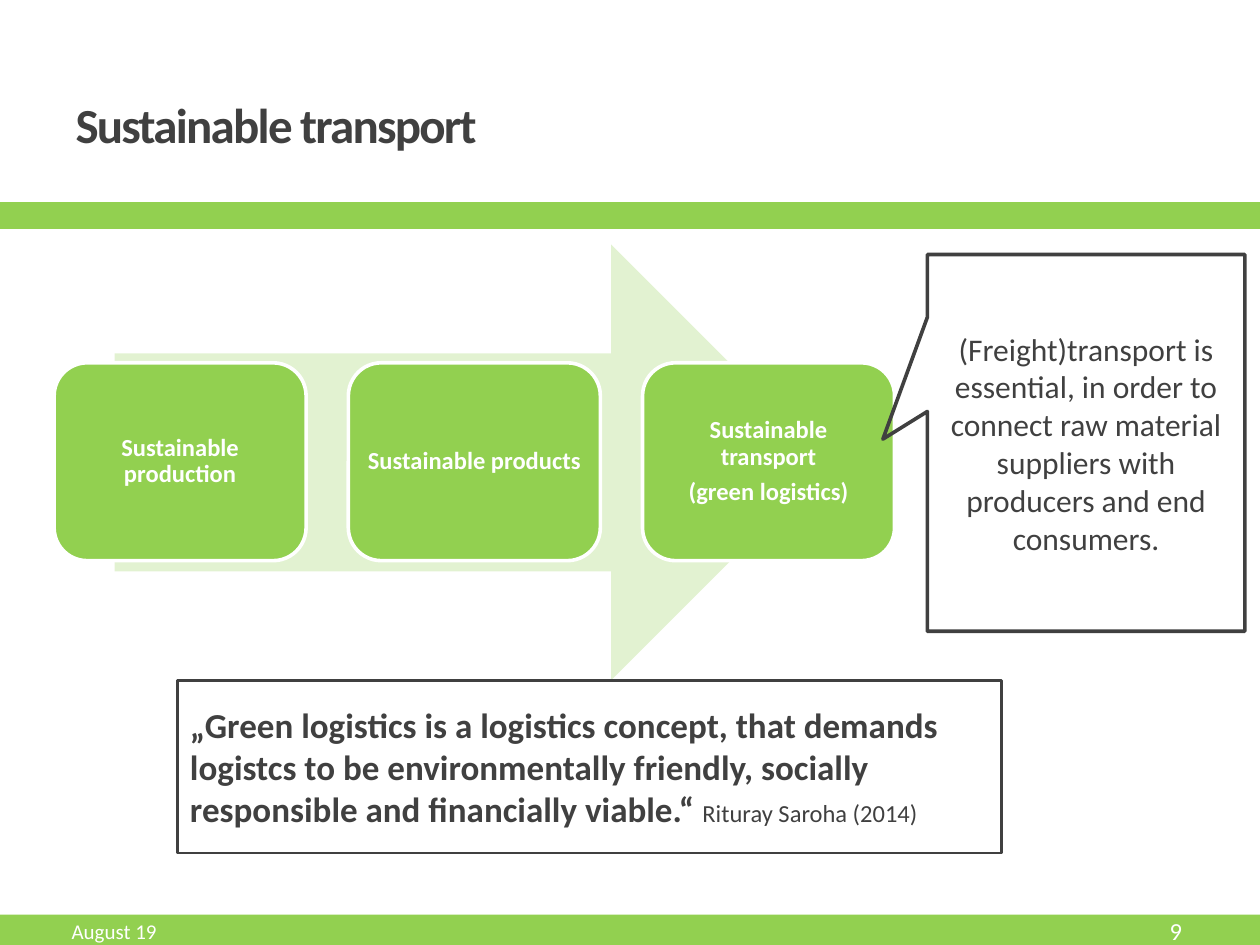
from dataclasses import dataclass

from lxml import etree
from pptx import Presentation
from pptx.dml.color import RGBColor
from pptx.enum.shapes import MSO_SHAPE
from pptx.enum.text import MSO_ANCHOR, PP_ALIGN
from pptx.oxml.ns import qn
from pptx.util import Inches, Pt

RECT = MSO_SHAPE.RECTANGLE
ROUND = MSO_SHAPE.ROUNDED_RECTANGLE
ARROW = MSO_SHAPE.RIGHT_ARROW
CALLOUT = MSO_SHAPE.RECTANGULAR_CALLOUT
MIDDLE = MSO_ANCHOR.MIDDLE
LEFT, CENTER, RIGHT = PP_ALIGN.LEFT, PP_ALIGN.CENTER, PP_ALIGN.RIGHT


@dataclass(frozen=True)
class Theme:
    font: str = "Calibri"
    green: RGBColor = RGBColor(0x92, 0xD0, 0x50)
    white: RGBColor = RGBColor(0xFF, 0xFF, 0xFF)
    dark: RGBColor = RGBColor(0x40, 0x40, 0x40)
    title: int = 28
    quote: int = 20
    body: int = 18
    small: int = 14
    date: int = 12
    edge: float = 2.08
    thin: float = 1.5


THEME = Theme()


def place(shape, box):
    shape.left, shape.top, shape.width, shape.height = map(Inches, box)


def write(shape, *paras, size, color, bold=False, align=LEFT,
          before=0, after=0, line=1.0, inset=None):
    frame = shape.text_frame
    frame.word_wrap = True
    frame.vertical_anchor = MIDDLE
    if inset is not None:
        frame.margin_left = frame.margin_right = Inches(inset)
        frame.margin_top = frame.margin_bottom = Inches(inset)
    for num, text in enumerate(paras):
        para = frame.add_paragraph() if num else frame.paragraphs[0]
        para.alignment = align
        para.space_before, para.space_after = Pt(before), Pt(after)
        para.line_spacing = line
        add_run(para, text, size, color, bold)


def add_run(para, text, size, color, bold=False):
    run = para.add_run()
    run.text = text
    font = run.font
    font.name, font.size, font.bold = THEME.font, Pt(size), bold
    font.color.rgb = color
    return run


def add_shape(slide, kind, box, fill=None, edge=None, width=THEME.edge, alpha=None):
    shape = slide.shapes.add_shape(kind, *map(Inches, box))
    shape.shadow.inherit = False
    if fill is None:
        shape.fill.background()
    else:
        shape.fill.solid()
        shape.fill.fore_color.rgb = fill
    if alpha is not None:
        tint = shape.fill._xPr.find(".//" + qn("a:srgbClr"))
        etree.SubElement(tint, qn("a:alpha")).set("val", str(alpha * 1000))
    if edge is None:
        shape.line.fill.background()
    else:
        shape.line.color.rgb = edge
        shape.line.width = Pt(width)
    return shape


def add_label(slide, box, text, **style):
    label = slide.shapes.add_textbox(*map(Inches, box))
    write(label, text, color=THEME.white, **style)


def add_title(slide, text):
    title = slide.shapes.title
    place(title, (0.5, 0.44, 5.21, 1.08))
    write(title, text, size=THEME.title, color=THEME.dark, bold=True)
    run = title.text_frame.paragraphs[0].runs[0]
    run.font._element.set("spc", "-100")


def add_frame(slide):
    add_shape(slide, RECT, (-0.04, 7.26, 10.16, 0.5), THEME.green)
    add_shape(slide, RECT, (0, 1.62, 10.12, 0.18), THEME.green, THEME.green)
    add_label(slide, (0.47, 7.21, 3.17, 0.36), "August 19", size=THEME.date)
    add_label(slide, (8.31, 7.21, 1.17, 0.36), "9", size=THEME.small, align=RIGHT)


def add_steps(slide, steps):
    add_shape(slide, ARROW, (0.91, 1.94, 5.67, 3.46), THEME.green, alpha=26)
    left, pitch = 0.43, 2.335
    for num, paras in enumerate(steps):
        box = (left + num * pitch, 2.88, 2, 1.57)
        step = add_shape(slide, ROUND, box, THEME.green, THEME.white)
        write(step, *paras, size=THEME.small, color=THEME.white, bold=True,
              align=CENTER, after=5, line=0.9, inset=0.06)


def add_quote(slide, text, source):
    quote = add_shape(slide, RECT, (1.41, 5.4, 6.54, 1.37),
                      edge=THEME.dark, width=THEME.thin)
    write(quote, text, size=THEME.quote, color=THEME.dark, bold=True, before=4)
    add_run(quote.text_frame.paragraphs[0], source, THEME.small, THEME.dark)


def add_note(slide, text):
    note = add_shape(slide, CALLOUT, (7.36, 2.02, 2.52, 2.99), edge=THEME.dark)
    note.adjustments[0], note.adjustments[1] = -0.64, -0.01
    write(note, text, size=THEME.body, color=THEME.dark, align=CENTER)


def main():
    deck = Presentation()
    deck.slide_width, deck.slide_height = Inches(10), Inches(7.5)
    slide = deck.slides.add_slide(deck.slide_layouts[5])
    add_frame(slide)
    add_title(slide, "Sustainable transport")
    add_steps(slide, [
        ["Sustainable production"],
        ["Sustainable products"],
        ["Sustainable transport", "(green logistics)"],
    ])
    add_quote(slide, "„Green logistics is a logistics concept, that demands "
              "logistcs to be environmentally friendly, socially responsible "
              "and financially viable.“ ", "Rituray Saroha (2014)")
    add_note(slide, "(Freight)transport is essential, in order to connect raw "
             "material suppliers with producers and end consumers.")
    deck.save("out.pptx")


if __name__ == "__main__":
    main()
